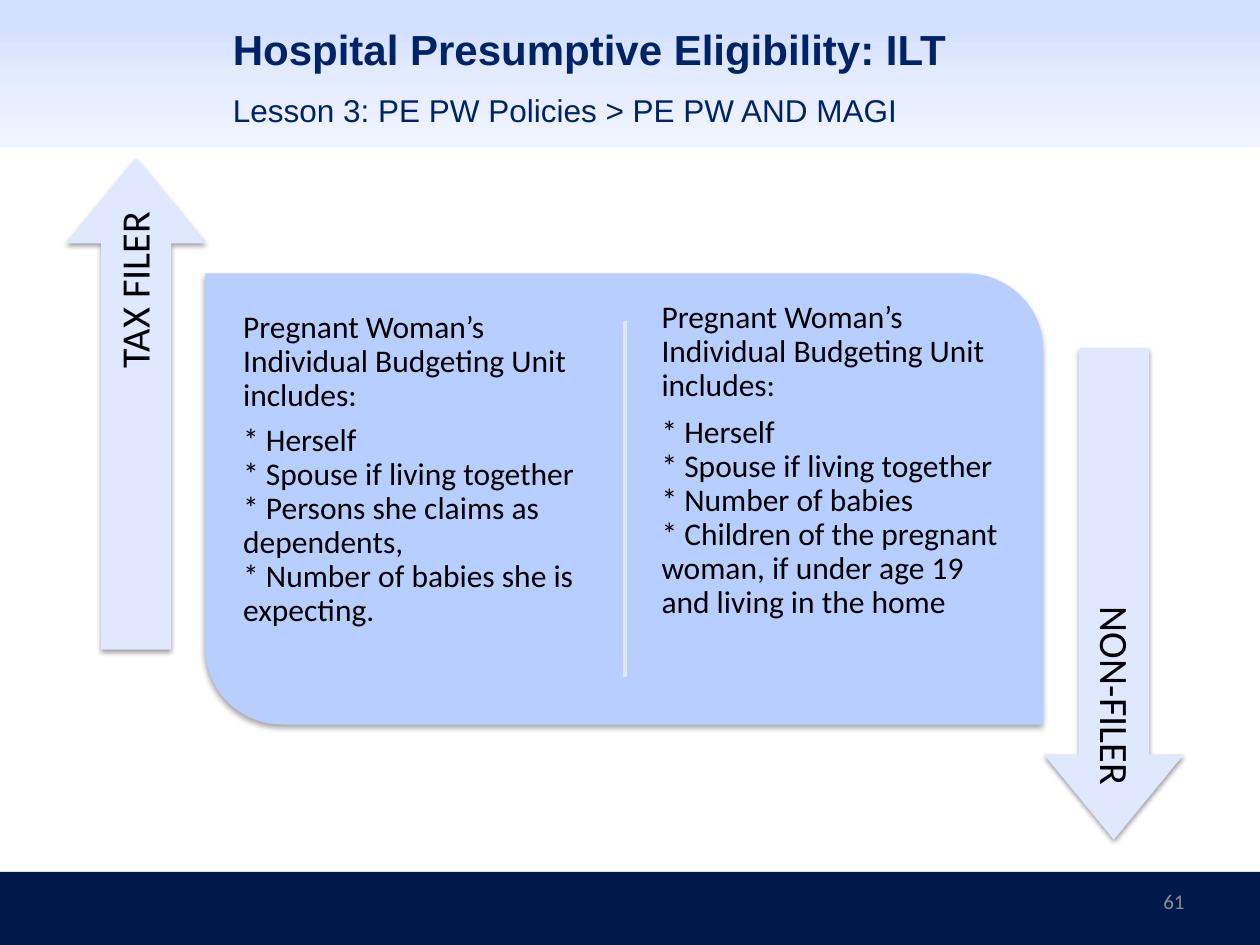
from dataclasses import dataclass

from pptx import Presentation
from pptx.dml.color import RGBColor
from pptx.enum.shapes import MSO_CONNECTOR, MSO_SHAPE
from pptx.enum.text import MSO_ANCHOR, PP_ALIGN
from pptx.oxml import parse_xml
from pptx.oxml.ns import nsdecls
from pptx.util import Inches, Pt


@dataclass(frozen=True)
class Theme:
    navy: str = "00194D"
    heading: str = "002266"
    panel: str = "B8CEFF"
    arrow: str = "DFE8FF"
    body: str = "000000"
    number: str = "8C8C8C"
    header_stops: tuple = ((20, "D4E0FF"), (50, "E3EBFF"), (100, "F1F5FF"))
    heading_font: str = "Arial"
    body_font: str = "Calibri"
    title_size: int = 24
    text_size: int = 18
    arrow_size: int = 23
    number_size: int = 12


class SlideBuilder:
    def __init__(self, slide, theme):
        self.slide = slide
        self.theme = theme

    def shape(self, kind, box, color=None, adjustments=(), rotation=0):
        item = self.slide.shapes.add_shape(kind, *map(Inches, box))
        item.shadow.inherit = False
        item.line.fill.background()
        item.rotation = rotation
        for index, value in enumerate(adjustments):
            item.adjustments[index] = value
        if color:
            item.fill.solid()
            item.fill.fore_color.rgb = RGBColor.from_string(color)
        return item

    def gradient_band(self, box, stops):
        band = self.shape(MSO_SHAPE.RECTANGLE, box)
        marks = "".join(
            f'<a:gs pos="{position * 1000}"><a:srgbClr val="{color}"/></a:gs>'
            for position, color in stops
        )
        band._element.spPr.insert(2, parse_xml(
            f'<a:gradFill {nsdecls("a")} rotWithShape="1"><a:gsLst>{marks}</a:gsLst>'
            '<a:lin ang="5400000" scaled="0"/></a:gradFill>'))

    def soft_shadow(self, item, opacity, distance):
        effects = item._element.spPr.find(
            "{http://schemas.openxmlformats.org/drawingml/2006/main}effectLst")
        effects.append(parse_xml(
            f'<a:outerShdw {nsdecls("a")} blurRad="{Pt(3.1)}" dist="{Pt(distance)}" '
            'dir="5400000" rotWithShape="0"><a:srgbClr val="000000">'
            f'<a:alpha val="{opacity * 1000}"/></a:srgbClr></a:outerShdw>'))

    def divider(self, x, top, bottom, color):
        rule = self.slide.shapes.add_connector(
            MSO_CONNECTOR.STRAIGHT, *map(Inches, (x, top, x, bottom)))
        rule.line.color.rgb = RGBColor.from_string(color)
        rule.line.width = Pt(2)
        rule._element.spPr.append(parse_xml(f'<a:effectLst {nsdecls("a")}/>'))

    def text(self, box, lines, size, color, font, bold=False, align=PP_ALIGN.LEFT,
             anchor=MSO_ANCHOR.TOP, inset=None, spacing=None, lead_gap=0, rotation=0):
        holder = self.slide.shapes.add_textbox(*map(Inches, box))
        holder.rotation = rotation
        frame = holder.text_frame
        frame.word_wrap = True
        frame.vertical_anchor = anchor
        if inset is not None:
            frame.margin_left = frame.margin_right = Inches(inset)
            frame.margin_top = frame.margin_bottom = Inches(inset)
        frame.text = "\n".join(lines)
        for paragraph in frame.paragraphs:
            paragraph.alignment = align
            paragraph.line_spacing = spacing
            for run in paragraph.runs:
                run.font.size = Pt(size)
                run.font.name = font
                run.font.bold = bold
                run.font.color.rgb = RGBColor.from_string(color)
        if lead_gap:
            frame.paragraphs[0].space_after = Pt(lead_gap)

    def budget_unit(self, box, members, lead_gap):
        lines = ["Pregnant Woman’s Individual Budgeting Unit includes:"]
        lines += [f"* {member}" for member in members]
        self.text(box, lines, self.theme.text_size, self.theme.body,
                  self.theme.body_font, inset=0.07, spacing=0.9, lead_gap=lead_gap)

    def filer_arrow(self, label, arrow_box, label_box, rotation):
        arrow = self.shape(MSO_SHAPE.RIGHT_ARROW, arrow_box, self.theme.arrow,
                           (0.5, 0.61), rotation)
        self.soft_shadow(arrow, 38, 1.6)
        self.text(label_box, [label], self.theme.arrow_size, self.theme.body,
                  self.theme.body_font, align=PP_ALIGN.RIGHT, anchor=MSO_ANCHOR.MIDDLE,
                  inset=0.1, spacing=0.9, rotation=rotation)


def main():
    theme = Theme()
    deck = Presentation()
    deck.slide_width, deck.slide_height = Inches(10), Inches(7.5)
    builder = SlideBuilder(deck.slides.add_slide(deck.slide_layouts[6]), theme)

    # Footer and header bands
    builder.shape(MSO_SHAPE.RECTANGLE, (0, 6.92, 10, 0.58), theme.navy)
    builder.gradient_band((0, 0, 10, 1.17), theme.header_stops)
    builder.text((7.17, 6.95, 2.33, 0.4), ["61"], theme.number_size, theme.number,
                 theme.body_font, align=PP_ALIGN.RIGHT, anchor=MSO_ANCHOR.MIDDLE)

    # Title and lesson
    builder.text((1.75, 0.08, 7.75, 0.62), ["Hospital Presumptive Eligibility: ILT"],
                 theme.title_size, theme.heading, theme.heading_font, bold=True,
                 anchor=MSO_ANCHOR.MIDDLE)
    builder.text((1.75, 0.67, 7.75, 0.5), ["Lesson 3: PE PW Policies > PE PW AND MAGI"],
                 theme.text_size, theme.heading, theme.heading_font)

    # Panel comparing the two budgeting units
    panel = builder.shape(MSO_SHAPE.ROUND_2_DIAG_RECTANGLE, (1.63, 2.17, 6.65, 3.58),
                          theme.panel, (0, 0.17))
    builder.soft_shadow(panel, 35, 1.8)
    builder.divider(4.96, 2.55, 5.37, theme.arrow)
    builder.budget_unit((1.86, 2.4, 2.88, 2.9), [
        "Herself",
        "Spouse if living together",
        "Persons she claims as dependents,",
        "Number of babies she is expecting.",
    ], lead_gap=6.3)
    builder.budget_unit((5.18, 2.32, 2.88, 3.28), [
        "Herself",
        "Spouse if living together",
        "Number of babies",
        "Children of the pregnant woman, if under age 19 and living in the home",
    ], lead_gap=7.2)

    # Filer arrows
    builder.filer_arrow("TAX FILER", (-0.87, 2.65, 3.9, 1.11),
                        (-0.7, 3.09, 3.57, 0.55), 270)
    builder.filer_arrow("NON-FILER", (6.89, 4.16, 3.9, 1.11),
                        (7.05, 4.27, 3.57, 0.55), 90)

    deck.save("out.pptx")


if __name__ == "__main__":
    main()
